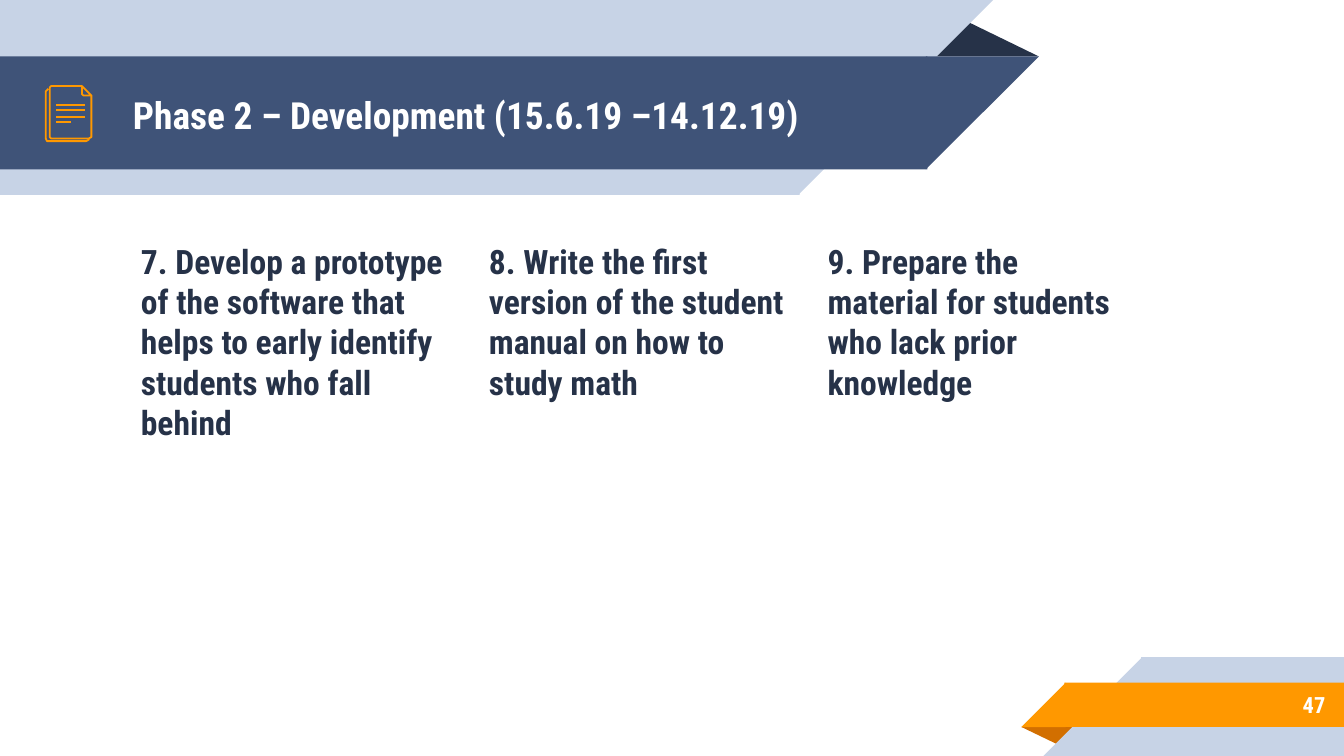
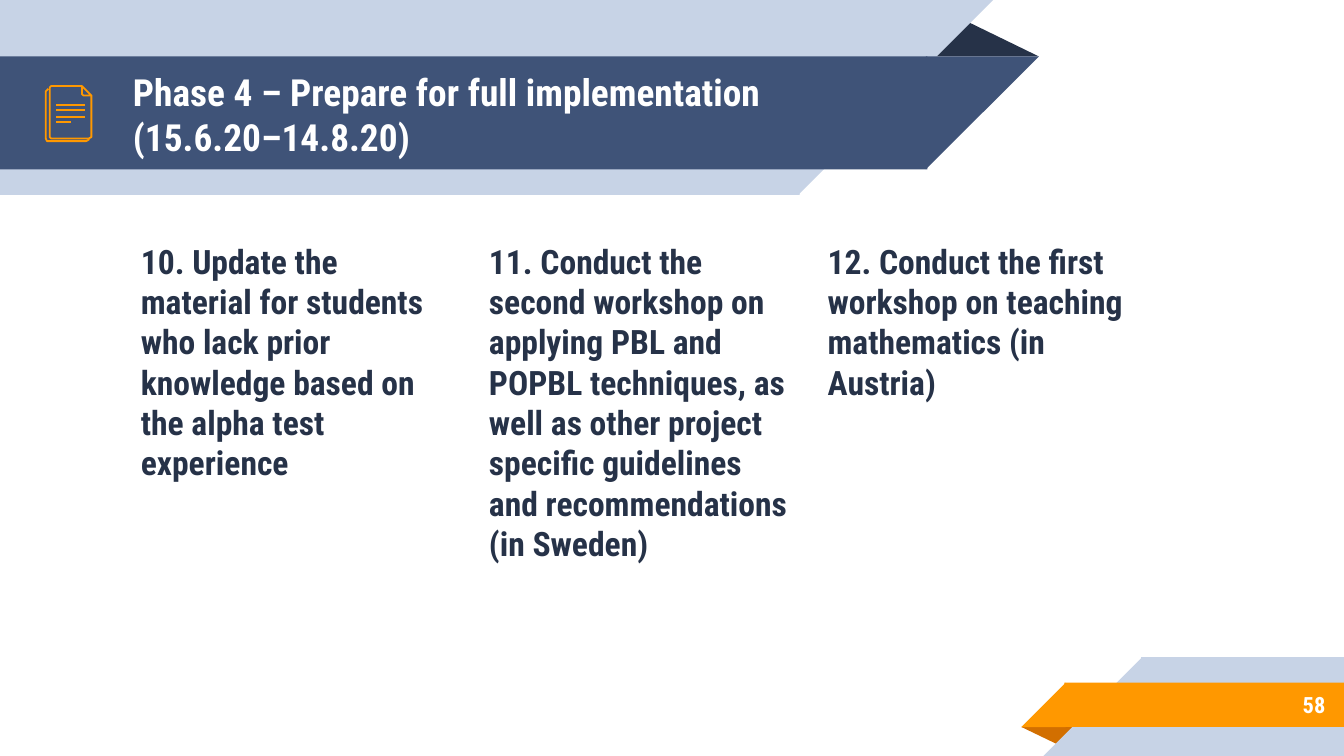
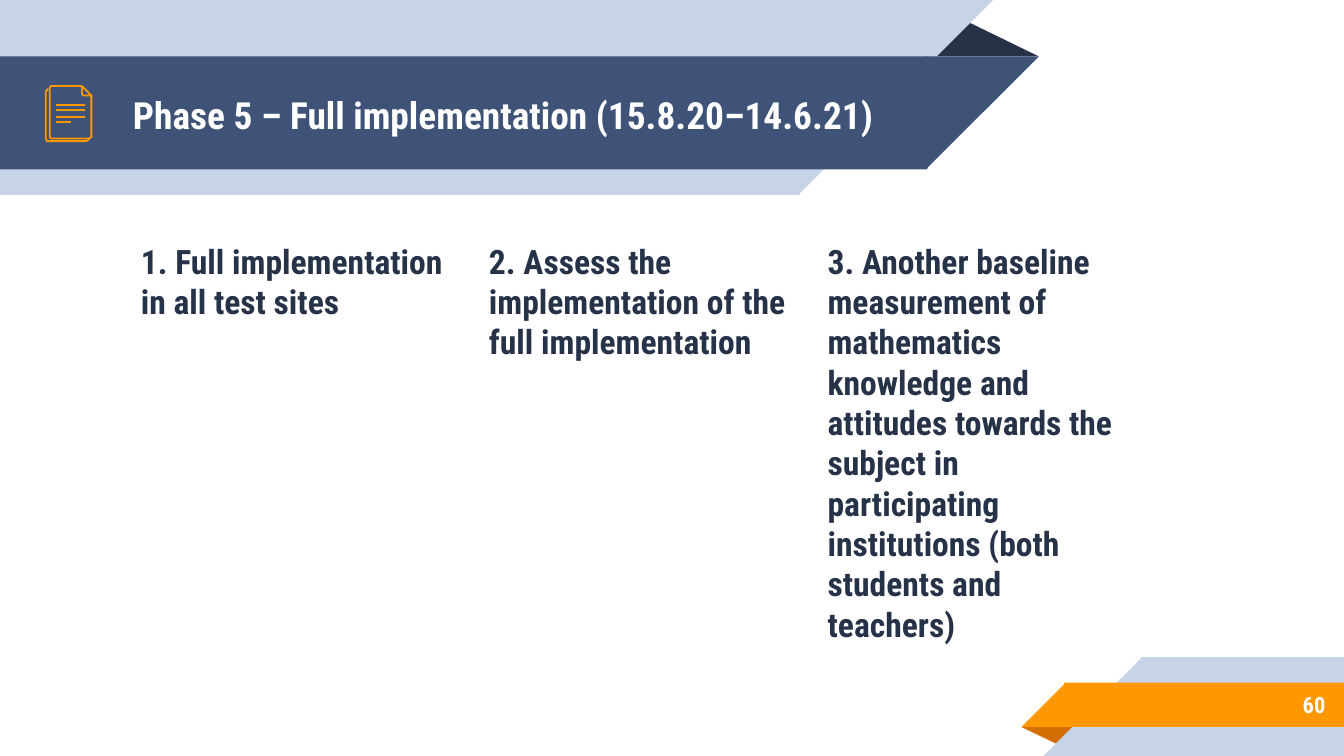
import pptx
import pptx.util
import pptx.dml.color
import pptx.enum.shapes
import pptx.enum.text
import pptx.oxml
import pptx.oxml.ns

Inches = pptx.util.Inches
Pt = pptx.util.Pt
RGBColor = pptx.dml.color.RGBColor
SHAPE = pptx.enum.shapes.MSO_SHAPE
ANCHOR = pptx.enum.text.MSO_ANCHOR
ALIGN = pptx.enum.text.PP_ALIGN

# Shared style
FONT = "Roboto Condensed"
NAVY = RGBColor(0x26, 0x32, 0x48)
BLUE = RGBColor(0x3F, 0x53, 0x78)
PALE_BLUE = RGBColor(0xC7, 0xD3, 0xE6)
ORANGE = RGBColor(0xFF, 0x98, 0x00)
DARK_ORANGE = RGBColor(0xD2, 0x6F, 0x00)
WHITE = RGBColor(0xFF, 0xFF, 0xFF)
ICON_LINE = Pt(0.96)
FOLD_APEX = 0.324
OVERLAP = 0.01  # hides the seam between a band and its slanted end

COLUMN_LEFTS = (0.95, 3.54, 6.06)

# Document icon outlines, in inches
BACK_PAGE = [(0.66, 1.03), (0.66, 1.04), (0.64, 1.05), (0.36, 1.05),
             (0.35, 1.05), (0.34, 1.03), (0.34, 0.68), (0.35, 0.67),
             (0.36, 0.66)]
FRONT_PAGE = [(0.68, 0.71), (0.68, 1.01), (0.68, 1.02), (0.66, 1.03),
              (0.38, 1.03), (0.37, 1.02), (0.37, 0.65), (0.38, 0.64),
              (0.61, 0.64)]
PAGE_CORNER = [(0.61, 0.70), (0.61, 0.64), (0.68, 0.71), (0.62, 0.71)]
TEXT_LINES = [(0.78, 0.63), (0.82, 0.63), (0.87, 0.63), (0.91, 0.53)]

# Title, title width, columns, slide number
PHASES = [
    ("Phase 2 – Development (15.6.19 –14.12.19)", 5.75,
     ["7. Develop a prototype of the software that helps to early identify "
      "students who fall behind",
      "8. Write the first version of the student manual on how to study math",
      "9. Prepare the material for students who lack prior knowledge"], "47"),
    ("Phase 4 – Prepare for full implementation (15.6.20–14.8.20)", 6.02,
     ["10. Update the material for students who lack prior knowledge based "
      "on the alpha test experience",
      "11. Conduct the second workshop on applying PBL and POPBL techniques, "
      "as well as other project specific guidelines and recommendations "
      "(in Sweden)",
      "12. Conduct the first workshop on teaching mathematics (in Austria)"],
     "58"),
    ("Phase 5 – Full implementation (15.8.20–14.6.21)", 6.02,
     ["1. Full implementation in all test sites",
      "2. Assess the implementation of the full implementation",
      "3. Another baseline measurement of mathematics knowledge and attitudes "
      "towards the subject in participating institutions (both students and "
      "teachers)"], "60"),
]


def add_block(group, kind, left, top, width, height, color, flips=""):
    """Add a plain filled shape; flips holds any of the axes H and V."""
    shape = group.shapes.add_shape(kind, Inches(left), Inches(top),
                                   Inches(width), Inches(height))
    shape.shadow.inherit = False
    shape.fill.solid()
    shape.fill.fore_color.rgb = color
    shape.line.fill.background()
    for axis in flips:
        shape._element.spPr.xfrm.set("flip" + axis, "1")
    return shape


def add_fold(group, left, top, width, height, color, flips=""):
    fold = add_block(group, SHAPE.ISOSCELES_TRIANGLE, left, top, width, height,
                     color, flips)
    fold.adjustments[0] = FOLD_APEX


def add_left_band(group, top, width, height, color):
    """Band from the left edge with a slanted right end."""
    add_block(group, SHAPE.RECTANGLE, 0, top, width + OVERLAP, height, color)
    add_block(group, SHAPE.RIGHT_TRIANGLE, width, top, height, height, color, "V")


def add_right_band(group, left, top, width, height, color):
    """Band to the right edge with a slanted left end."""
    add_block(group, SHAPE.RECTANGLE, left - OVERLAP, top, width + OVERLAP,
              height, color)
    add_block(group, SHAPE.RIGHT_TRIANGLE, left - height, top, height, height,
              color, "H")


def add_bands(slide):
    header = slide.shapes.add_group_shape()
    add_fold(header, 6.88, 0.14, 0.85, 0.28, NAVY)
    add_left_band(header, 0, 5.94, 1.45, PALE_BLUE)
    add_left_band(header, 0.42, 6.89, 0.84, BLUE)

    footer = slide.shapes.add_group_shape()
    add_fold(footer, 7.6, 5.41, 0.43, 0.14, DARK_ORANGE, "HV")
    add_right_band(footer, 8.5, 4.89, 1.5, 0.74, PALE_BLUE)
    add_right_band(footer, 7.93, 5.08, 2.08, 0.33, ORANGE)


def add_text(slide, text, left, top, width, height, size, color,
             anchor=ANCHOR.MIDDLE, align=ALIGN.LEFT, space_before=0):
    box = slide.shapes.add_textbox(Inches(left), Inches(top),
                                   Inches(width), Inches(height))
    frame = box.text_frame
    frame.word_wrap = True
    frame.vertical_anchor = anchor
    frame.margin_left = frame.margin_right = Inches(0.1)
    frame.margin_top = frame.margin_bottom = Inches(0.1)
    paragraph = frame.paragraphs[0]
    paragraph.alignment = align
    paragraph.space_before = Pt(space_before)
    run = paragraph.add_run()
    run.text = text
    run.font.name = FONT
    run.font.size = Pt(size)
    run.font.bold = True
    run.font.color.rgb = color


def style_icon_line(shape):
    shape.line.color.rgb = ORANGE
    shape.line.width = ICON_LINE


def add_outline(group, points, close=False):
    corners = [(Inches(x), Inches(y)) for x, y in points]
    builder = group.shapes.build_freeform(*corners[0])
    builder.add_line_segments(corners[1:], close=close)
    outline = builder.convert_to_shape()
    outline.shadow.inherit = False
    outline.fill.background()
    style_icon_line(outline)


def add_document_icon(slide):
    icon = slide.shapes.add_group_shape()
    add_outline(icon, BACK_PAGE)
    add_outline(icon, FRONT_PAGE)
    for y, right in TEXT_LINES:
        line = icon.shapes.add_connector(
            pptx.enum.shapes.MSO_CONNECTOR.STRAIGHT,
            Inches(right), Inches(y), Inches(0.42), Inches(y))
        style_icon_line(line)
        line._element.spPr.append(pptx.oxml.parse_xml(
            "<a:effectLst %s/>" % pptx.oxml.ns.nsdecls("a")))
    add_outline(icon, PAGE_CORNER, close=True)


def add_phase_slide(presentation, title, title_width, columns, number):
    slide = presentation.slides.add_slide(presentation.slide_layouts[6])
    add_bands(slide)
    add_text(slide, title, 0.89, 0.43, title_width, 0.84, 20, WHITE)
    for left, text in zip(COLUMN_LEFTS, columns):
        add_text(slide, text, left, 1.69, 2.46, 2.96, 18, NAVY,
                 anchor=ANCHOR.TOP, space_before=6)
    add_text(slide, number, 8.33, 5.07, 1.63, 0.35, 12, WHITE,
             align=ALIGN.RIGHT)
    add_document_icon(slide)


def main():
    presentation = pptx.Presentation()
    # Widescreen, 16:9
    presentation.slide_width = Inches(10)
    presentation.slide_height = Inches(10) * 9 // 16
    for phase in PHASES:
        add_phase_slide(presentation, *phase)
    presentation.save("out.pptx")


if __name__ == "__main__":
    main()
